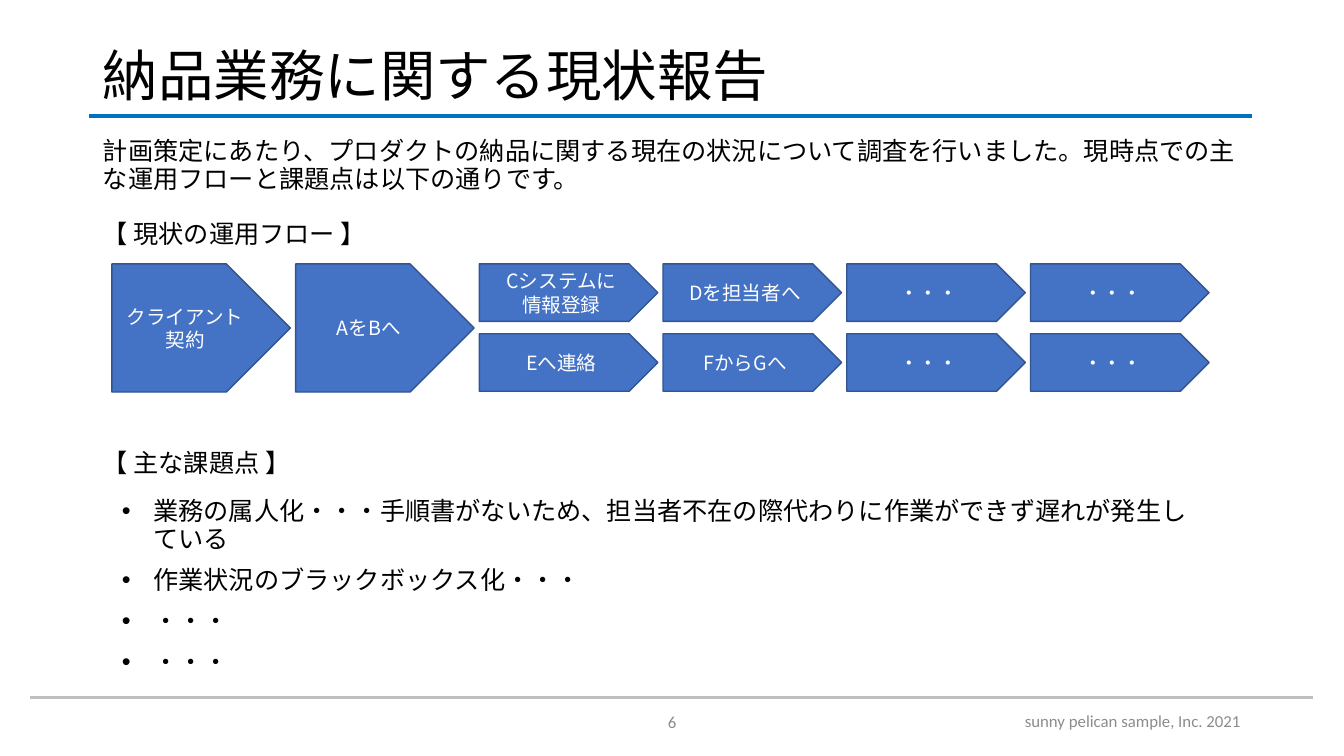
from lxml import etree
from pptx import Presentation
from pptx import util as u
from pptx.dml.color import RGBColor
from pptx.enum import shapes, text
from pptx.oxml.ns import qn

JAPANESE = "Noto Sans CJK JP"
LATIN = "Calibri"
BLACK = "000000"
GREY = "8C8C8C"

FLOW_LEFT, FLOW_TOP = 2.82, 6.65
STEP_PITCH, ROW_PITCH = 4.63, 1.76
STEP_WIDTH, STEP_HEIGHT, TALL_HEIGHT = 4.5, 1.45, 3.23

TALL_STEPS = ["クライアント\n契約", "AをBへ"]
STEP_ROWS = [
    ["Cシステムに\n情報登録", "Dを担当者へ", "・・・", "・・・"],
    ["Eへ連絡", "FからGへ", "・・・", "・・・"],
]
ISSUES = [
    "業務の属人化・・・手順書がないため、担当者不在の際代わりに作業ができず遅れが発生している",
    "作業状況のブラックボックス化・・・",
    "・・・",
    "・・・",
]


def color(value):
    return RGBColor.from_string(value)


def write(shape, content, size, align=text.PP_ALIGN.LEFT, font=JAPANESE,
          fill=BLACK, anchor=text.MSO_ANCHOR.MIDDLE, spacing=None, before=0):
    frame = shape.text_frame
    frame.word_wrap = True
    frame.auto_size = text.MSO_AUTO_SIZE.NONE
    frame.vertical_anchor = anchor
    frame.text = content
    for paragraph in frame.paragraphs:
        paragraph.alignment = align
        paragraph.line_spacing = spacing
        paragraph.space_before = u.Pt(before)
        paragraph.font.size = u.Pt(size)
        paragraph.font.color.rgb = color(fill)
        paragraph.font.name = font
        defaults = paragraph._p.pPr.find(qn("a:defRPr"))
        etree.SubElement(defaults, qn("a:ea")).set("typeface", font)


def write_body(shape, content):
    write(shape, content, 18, anchor=text.MSO_ANCHOR.TOP, spacing=0.9, before=10)


def place(shape, left, top, width, height):
    shape.left, shape.top = u.Cm(left), u.Cm(top)
    shape.width, shape.height = u.Cm(width), u.Cm(height)


def set_bullets(shape, bullet, indent):
    for paragraph in shape.text_frame.paragraphs:
        properties = paragraph._p.pPr
        properties.set("marL", str(u.Cm(indent)))
        properties.set("indent", str(-u.Cm(indent)))
        mark = etree.Element(qn("a:buChar" if bullet else "a:buNone"))
        if bullet:
            mark.set("char", bullet)
        properties.find(qn("a:defRPr")).addprevious(mark)


def add_rule(slide, left, right, top, line_color, width):
    rule = slide.shapes.add_connector(
        shapes.MSO_CONNECTOR.STRAIGHT, u.Cm(left), u.Cm(top), u.Cm(right), u.Cm(top))
    rule.line.color.rgb = color(line_color)
    rule.line.width = u.Pt(width)
    etree.SubElement(rule._element.spPr, qn("a:effectLst"))


def add_text_box(slide, left, top, width, height):
    return slide.shapes.add_textbox(u.Cm(left), u.Cm(top), u.Cm(width), u.Cm(height))


def add_heading(slide, content, top):
    write_body(add_text_box(slide, 2.34, top, 29.21, 1.02), content)


def add_step(slide, content, column, row=0, height=STEP_HEIGHT):
    step = slide.shapes.add_shape(
        shapes.MSO_SHAPE.PENTAGON,
        u.Cm(FLOW_LEFT + column * STEP_PITCH), u.Cm(FLOW_TOP + row * ROW_PITCH),
        u.Cm(STEP_WIDTH), u.Cm(height))
    step.shadow.inherit = False
    step.fill.solid()
    step.fill.fore_color.rgb = color("4472C4")
    step.line.color.rgb = color("325491")
    step.line.width = u.Pt(1)
    write(step, content, 14, align=text.PP_ALIGN.CENTER, fill="FFFFFF")


def add_flow(slide):
    for column, content in enumerate(TALL_STEPS):
        add_step(slide, content, column, height=TALL_HEIGHT)
    for row, steps in enumerate(STEP_ROWS):
        for column, content in enumerate(steps, start=len(TALL_STEPS)):
            add_step(slide, content, column, row)


def add_footer(slide):
    add_rule(slide, 0.76, 33.1, 17.58, "BFBFBF", 2)
    write(add_text_box(slide, 21.08, 17.65, 10.44, 1.02),
          "sunny pelican sample, Inc. 2021", 12,
          align=text.PP_ALIGN.RIGHT, font=LATIN, fill=GREY)
    write(add_text_box(slide, 13.13, 17.68, 7.62, 1.02), "6", 12,
          align=text.PP_ALIGN.CENTER, font=LATIN, fill=GREY)


def main():
    presentation = Presentation()
    presentation.slide_width, presentation.slide_height = u.Cm(33.87), u.Cm(19.05)
    slide = presentation.slides.add_slide(
        presentation.slide_layouts.get_by_name("Two Content"))
    title, lead, issues = slide.placeholders

    place(title, 2.34, 1.02, 29.21, 1.9)
    write(title, "納品業務に関する現状報告", 39.6, spacing=0.9)
    add_rule(slide, 2.24, 31.55, 2.92, "0070C0", 3)

    place(lead, 2.34, 3.38, 29.21, 1.9)
    write_body(lead, "計画策定にあたり、プロダクトの納品に関する現在の状況について調査を"
                     "行いました。現時点での主な運用フローと課題点は以下の通りです。")
    set_bullets(lead, None, 0)

    add_heading(slide, "【 現状の運用フロー 】", 5.46)
    add_flow(slide)

    add_heading(slide, "【 主な課題点 】", 11.23)
    place(issues, 2.82, 12.45, 27.64, 4.52)
    write_body(issues, "\n".join(ISSUES))
    set_bullets(issues, "•", 0.79)

    add_footer(slide)
    presentation.save("out.pptx")


if __name__ == "__main__":
    main()
